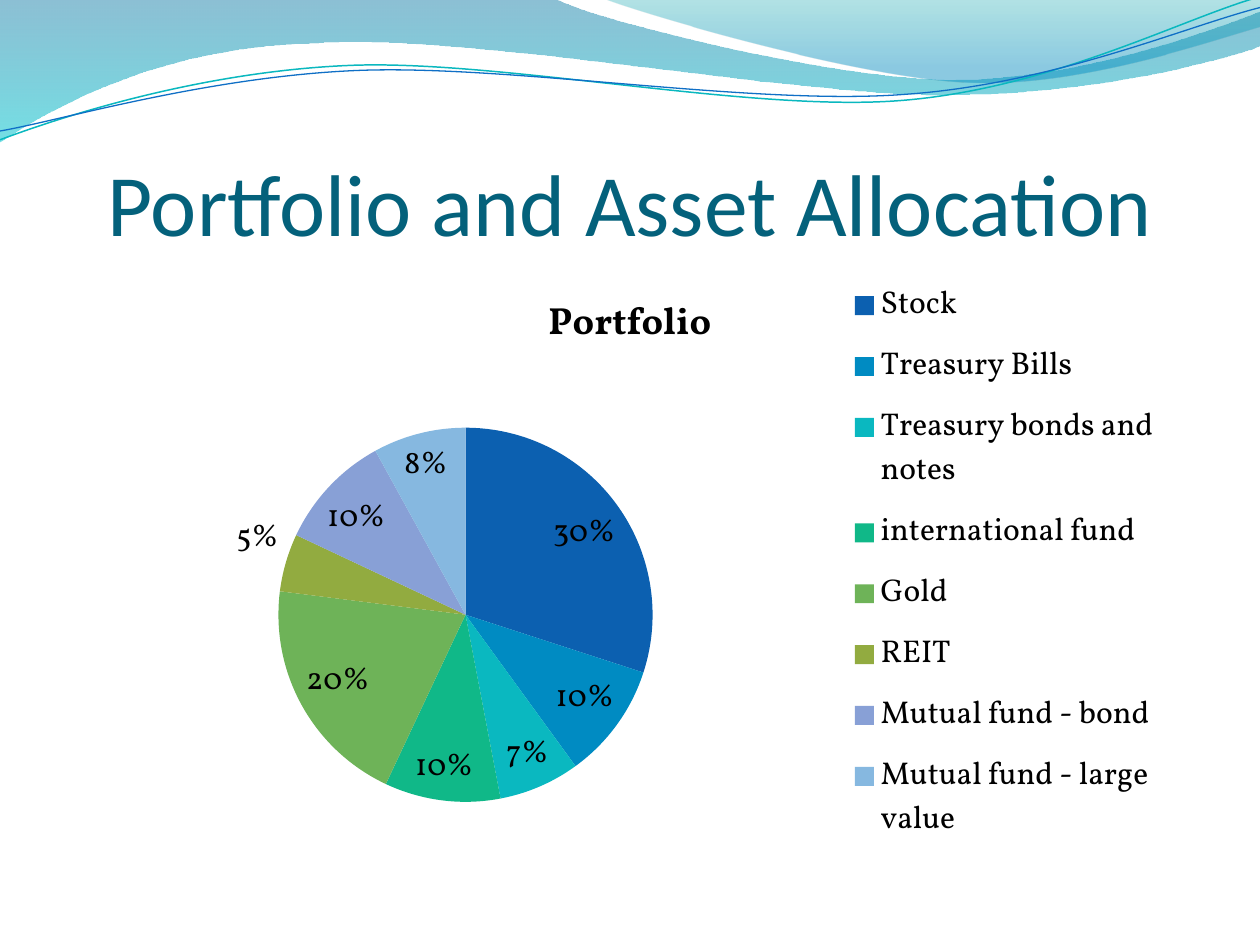
from lxml import etree
from pptx import Presentation
from pptx.chart.data import CategoryChartData
from pptx.dml.color import RGBColor
from pptx.enum.chart import XL_CHART_TYPE, XL_LABEL_POSITION, XL_LEGEND_POSITION
from pptx.enum.text import MSO_ANCHOR, MSO_AUTO_SIZE, PP_ALIGN
from pptx.oxml import parse_xml
from pptx.oxml.ns import nsdecls, qn
from pptx.util import Inches, Pt

PIE = XL_CHART_TYPE.PIE
BEST_FIT = XL_LABEL_POSITION.BEST_FIT
LEGEND_RIGHT = XL_LEGEND_POSITION.RIGHT
BOTTOM = MSO_ANCHOR.BOTTOM
NO_AUTOFIT = MSO_AUTO_SIZE.NONE
CENTER = PP_ALIGN.CENTER

COLORS = {
    "title": "04617B", "text": "000000",
    "teal_line": "0AB8BF", "blue_line": "0F6FC6",
    "deep_blue": "0074A1", "aqua": "00C6CF",
    "sea": "00A1A9", "sky": "008BBF",
}

# Each wave is a start point followed by lines (2 numbers) and Bezier curves (6 numbers).
LEFT_WAVE = [
    (0, 0), (4.4, -0.01), (4.76, 0.17, 6.64, 0.63, 7.58, 0.63),
    (8.53, 0.63, 9.58, 0.26, 10, 0.09), (10.01, 0.36),
    (9.83, 0.44, 8.7, 0.76, 7.46, 0.75), (6.22, 0.75, 3.82, 0.28, 2.57, 0.34),
    (1.29, 0.36, 0.46, 0.83, -0.01, 1.13),
]
RIGHT_WAVE = [
    (4.79, -0.01), (5.09, 0.11, 6.82, 0.62, 7.69, 0.65),
    (8.56, 0.69, 9.61, 0.32, 10, 0.21), (10, 0),
]
TEAL_WAVE = [
    (0, 1.11), (0.48, 0.93, 1.58, 0.57, 2.77, 0.52),
    (3.95, 0.47, 5.93, 0.89, 7.13, 0.8), (8.33, 0.71, 9.38, 0.15, 9.98, -0.02),
]
BLUE_WAVE = [
    (0, 1.04), (0.47, 0.96, 1.64, 0.61, 2.83, 0.56),
    (4.03, 0.51, 5.97, 0.84, 7.17, 0.75), (8.36, 0.67, 9.41, 0.21, 10, 0.06),
]

ASSETS = [
    ("Stock", 0.30, "0C60B0"),
    ("Treasury Bills", 0.10, "008BC2"),
    ("Treasury bonds and notes", 0.07, "0AB8C0"),
    ("international fund", 0.10, "10B888"),
    ("Gold", 0.20, "6EB358"),
    ("REIT", 0.05, "92AB40"),
    ("Mutual fund - bond", 0.10, "88A0D6"),
    ("Mutual fund - large value", 0.08, "86B8E0"),
]


def rgb(value):
    return RGBColor.from_string(value)


def add_wave(page, path, closed):
    """Build an outline through the end points, then bend its curved segments."""
    ends = [(Inches(step[-2]), Inches(step[-1])) for step in path]
    builder = page.shapes.build_freeform(*ends[0])
    builder.add_line_segments(ends[1:], close=closed)
    wave = builder.convert_to_shape()
    wave.shadow.inherit = False
    segments = list(wave._element.iter(qn("a:lnTo")))
    for segment, step in zip(segments, path[1:]):
        if len(step) == 6:
            bend(segment, step, wave.left, wave.top)
    return wave


def bend(segment, step, left, top):
    curve = etree.Element(qn("a:cubicBezTo"))
    for x, y in zip(step[::2], step[1::2]):
        point = etree.SubElement(curve, qn("a:pt"))
        point.set("x", str(Inches(x) - left))
        point.set("y", str(Inches(y) - top))
    segment.getparent().replace(segment, curve)


def add_filled_wave(page, path, stops):
    """Draw a wave with a downward gradient of (position, color, opacity) stops."""
    wave = add_wave(page, path, True)
    wave.line.fill.background()
    wave.fill.background()
    stop_xml = "".join(
        f'<a:gs pos="{position * 1000}"><a:srgbClr val="{COLORS[color]}">'
        f'<a:alpha val="{opacity * 1000}"/></a:srgbClr></a:gs>'
        for position, color, opacity in stops)
    gradient = parse_xml(
        f'<a:gradFill {nsdecls("a")} rotWithShape="1"><a:gsLst>{stop_xml}</a:gsLst>'
        '<a:lin ang="5400000" scaled="0"/></a:gradFill>')
    properties = wave._element.spPr
    properties.replace(properties.find(qn("a:noFill")), gradient)


def add_wave_line(page, path, color, width):
    wave = add_wave(page, path, False)
    wave.fill.background()
    wave.line.color.rgb = rgb(COLORS[color])
    wave.line.width = Pt(width)


def add_header_waves(page):
    add_filled_wave(page, LEFT_WAVE, [(0, "deep_blue", 45), (100, "aqua", 55)])
    add_filled_wave(page, RIGHT_WAVE, [(0, "sea", 30), (80, "sky", 45)])
    add_wave_line(page, TEAL_WAVE, "teal_line", 0.85)
    add_wave_line(page, BLUE_WAVE, "blue_line", 0.75)


def place_title(page, left, top, width, height):
    title = page.shapes.title
    title.left, title.top, title.width, title.height = left, top, width, height
    frame = title.text_frame
    frame.auto_size = NO_AUTOFIT
    frame.word_wrap = True
    frame.vertical_anchor = BOTTOM
    frame.margin_left = frame.margin_right = frame.margin_bottom = 0
    frame.margin_top = Inches(0.05)
    para = frame.paragraphs[0]
    para.alignment = CENTER
    span = para.add_run()
    span.text = "Portfolio and Asset Allocation"
    style_font(span.font, 50, "Calibri", "title")


def style_font(font, size, name="Vollkorn", color="text", bold=False):
    font.size = Pt(size)
    font.name = name
    font.bold = bold
    font.color.rgb = rgb(COLORS[color])


def set_layout(element, x, y, w, h, inner=False):
    """Fix a chart part at fractions of the chart's size."""
    layout = element.find(qn("c:layout"))
    if layout is None:
        layout = parse_xml(f'<c:layout {nsdecls("c")}/>')
        position = element.find(qn("c:legendPos"))
        if position is None:
            element.insert(0, layout)
        else:
            position.addnext(layout)
    manual = etree.SubElement(layout, qn("c:manualLayout"))
    values = [("layoutTarget", "inner")] if inner else []
    values += [("xMode", "edge"), ("yMode", "edge"), ("x", x), ("y", y), ("w", w), ("h", h)]
    for tag, value in values:
        etree.SubElement(manual, qn(f"c:{tag}")).set("val", str(value))


def add_portfolio_chart(page, left, top, width, height):
    data = CategoryChartData(number_format="0%")
    data.categories = [name for name, _, _ in ASSETS]
    data.add_series("Series 1", [share for _, share, _ in ASSETS])
    chart = page.shapes.add_chart(PIE, left, top, width, height, data).chart
    style_font(chart.font, 18)

    chart.has_title = True
    span = chart.chart_title.text_frame.paragraphs[0].add_run()
    span.text = "Portfolio"
    style_font(span.font, 21.6, bold=True)
    chart.chart_title.include_in_layout = False

    chart.has_legend = True
    chart.legend.position = LEGEND_RIGHT
    chart.legend.include_in_layout = False
    style_font(chart.legend.font, 18)
    set_layout(chart.legend._element, 0.68, 0, 0.3, 0.98)

    plot = chart.plots[0]
    plot.vary_by_categories = True
    set_layout(chart._chartSpace.chart.plotArea, 0.19, 0.26, 0.33, 0.63, inner=True)
    for index, (_, _, color) in enumerate(ASSETS):
        fill = plot.series[0].points[index].format.fill
        fill.solid()
        fill.fore_color.rgb = rgb(color)

    plot.has_data_labels = True
    labels = plot.data_labels
    labels.show_value = True
    labels.number_format = "0%"
    labels.number_format_is_linked = False
    labels.position = BEST_FIT
    style_font(labels.font, 18)


def main():
    deck = Presentation()
    deck.slide_width, deck.slide_height = Inches(10), Inches(7.5)
    page = deck.slides.add_slide(deck.slide_layouts[5])
    add_header_waves(page)
    place_title(page, Inches(0.5), Inches(0.77), Inches(9), Inches(1.25))
    add_portfolio_chart(page, Inches(0.5), Inches(2.12), Inches(9), Inches(4.8))
    deck.save("out.pptx")


if __name__ == "__main__":
    main()
